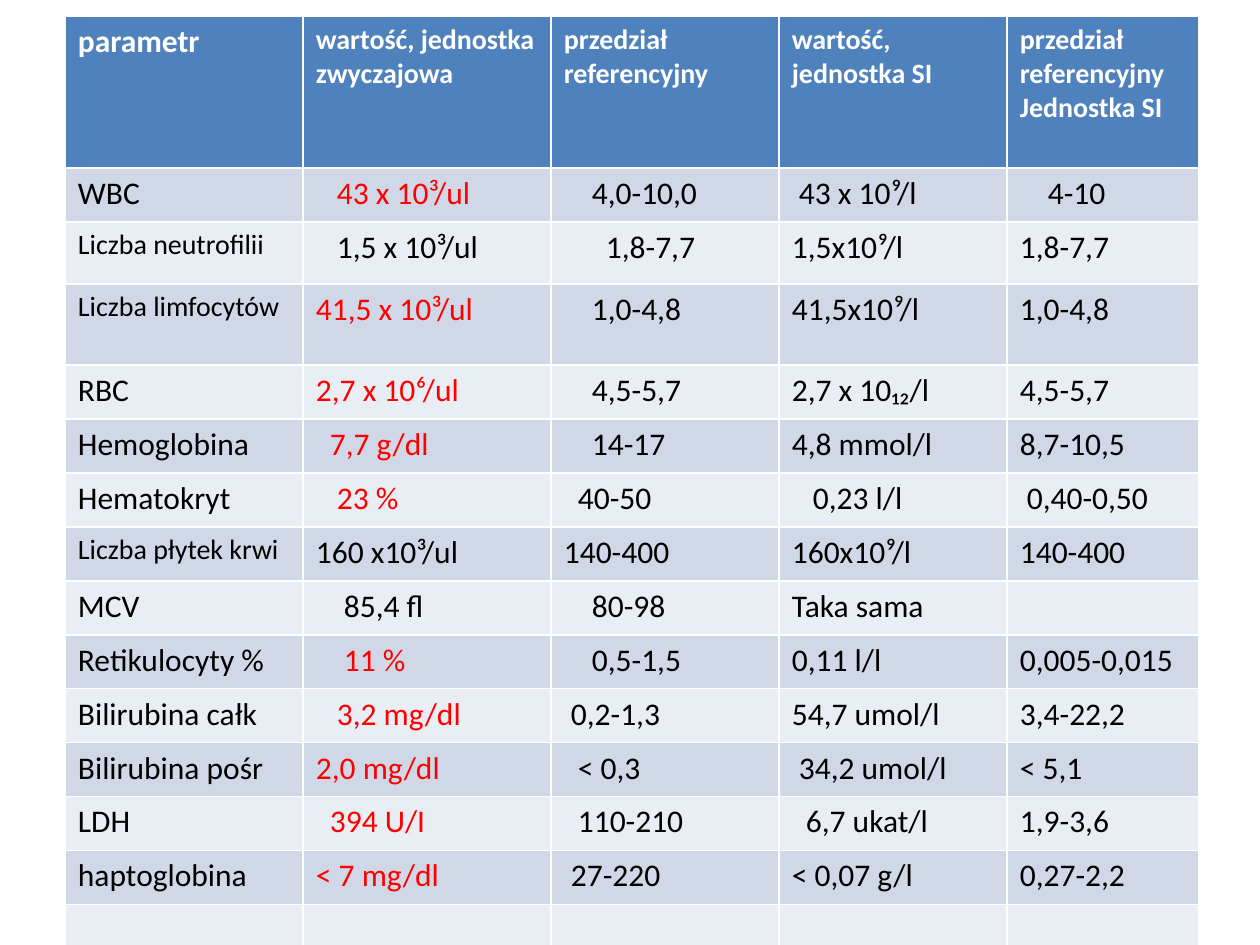
from pptx import Presentation
from pptx.dml.color import RGBColor
from pptx.util import Emu, Pt

HEADER = ["parametr", "wartość, jednostka zwyczajowa", "przedział referencyjny",
          "wartość, jednostka SI", "przedział referencyjny\nJednostka SI"]

# (texts, indent steps of each cell, result out of range)
ROWS = [
    (["WBC", "43 x 10³/ul", "4,0-10,0", "43 x 10⁹/l", "4-10"], (0, 3, 4, 1, 4), True),
    (["Liczba neutrofilii", "1,5 x 10³/ul", "1,8-7,7", "1,5x10⁹/l", "1,8-7,7"], (0, 3, 6, 0, 0), False),
    (["Liczba limfocytów", "41,5 x 10³/ul", "1,0-4,8", "41,5x10⁹/l", "1,0-4,8"], (0, 0, 4, 0, 0), True),
    (["RBC", "2,7 x 10⁶/ul", "4,5-5,7", "2,7 x 10₁₂/l", "4,5-5,7"], (0, 0, 4, 0, 0), True),
    (["Hemoglobina", "7,7 g/dl", "14-17", "4,8 mmol/l", "8,7-10,5"], (0, 2, 4, 0, 0), True),
    (["Hematokryt", "23 %", "40-50", "0,23 l/l", "0,40-0,50"], (0, 3, 2, 3, 1), True),
    (["Liczba płytek krwi", "160 x10³/ul", "140-400", "160x10⁹/l", "140-400"], (0, 0, 0, 0, 0), False),
    (["MCV", "85,4 fl", "80-98", "Taka sama", ""], (0, 4, 4, 0, 0), False),
    (["Retikulocyty %", "11 %", "0,5-1,5", "0,11 l/l", "0,005-0,015"], (0, 4, 4, 0, 0), True),
    (["Bilirubina całk", "3,2 mg/dl", "0,2-1,3", "54,7 umol/l", "3,4-22,2"], (0, 3, 1, 0, 0), True),
    (["Bilirubina pośr", "2,0 mg/dl", "< 0,3", "34,2 umol/l", "< 5,1"], (0, 0, 2, 1, 0), True),
    (["LDH", "394 U/I", "110-210", "6,7 ukat/l", "1,9-3,6"], (0, 2, 2, 2, 0), True),
    (["haptoglobina", "< 7 mg/dl", "27-220", "< 0,07 g/l", "0,27-2,2"], (0, 0, 1, 0, 0), True),
    ([""] * 5, (0,) * 5, False),
]

THEME = {
    "font": "Calibri", "size": 18, "small": 16,
    "text": "000000", "alert": "FF0000", "head_text": "FFFFFF",
    "head": "4F81BD", "bands": ("D0D8E8", "E9EDF4"),
}

SLIDE = (1260, 945)
LEFT, TOP = 65, 16
COLUMNS = [238, 248, 228, 228, 192]
HEIGHTS = [152, 54, 62, 81] + [54] * 10 + [51]
MARGIN, INDENT = 13, 7
VALUE_COLUMN = 1


def px(n):
    return Emu(round(n * 914400 / 126))


def write(cell, text, fill, color, size=THEME["size"], bold=False, indent=0):
    cell.fill.solid()
    cell.fill.fore_color.rgb = RGBColor.from_string(fill)
    cell.margin_left = px(MARGIN + indent * INDENT)
    cell.text_frame.text = text
    for p in cell.text_frame.paragraphs:
        p.font.size = Pt(size)
        for r in p.runs:
            r.font.name = THEME["font"]
            r.font.size = Pt(size)
            r.font.bold = bold
            r.font.color.rgb = RGBColor.from_string(color)


def main():
    prs = Presentation()
    prs.slide_width, prs.slide_height = map(px, SLIDE)
    s = prs.slides.add_slide(prs.slide_layouts[6])
    table = s.shapes.add_table(len(HEIGHTS), len(COLUMNS), px(LEFT), px(TOP),
                               px(sum(COLUMNS)), px(sum(HEIGHTS))).table
    for column, width in zip(table.columns, COLUMNS):
        column.width = px(width)
    for row, height in zip(table.rows, HEIGHTS):
        row.height = px(height)

    for c, text in enumerate(HEADER):
        write(table.cell(0, c), text, THEME["head"], THEME["head_text"], bold=True,
              size=THEME["small"] if c else THEME["size"])

    for i, (texts, indents, alert) in enumerate(ROWS):
        for c, (text, indent) in enumerate(zip(texts, indents)):
            write(table.cell(i + 1, c), text, THEME["bands"][i % 2],
                  THEME["alert" if alert and c == VALUE_COLUMN else "text"],
                  size=THEME["small" if text.startswith("Liczba") else "size"],
                  indent=indent)

    prs.save("out.pptx")


if __name__ == "__main__":
    main()
